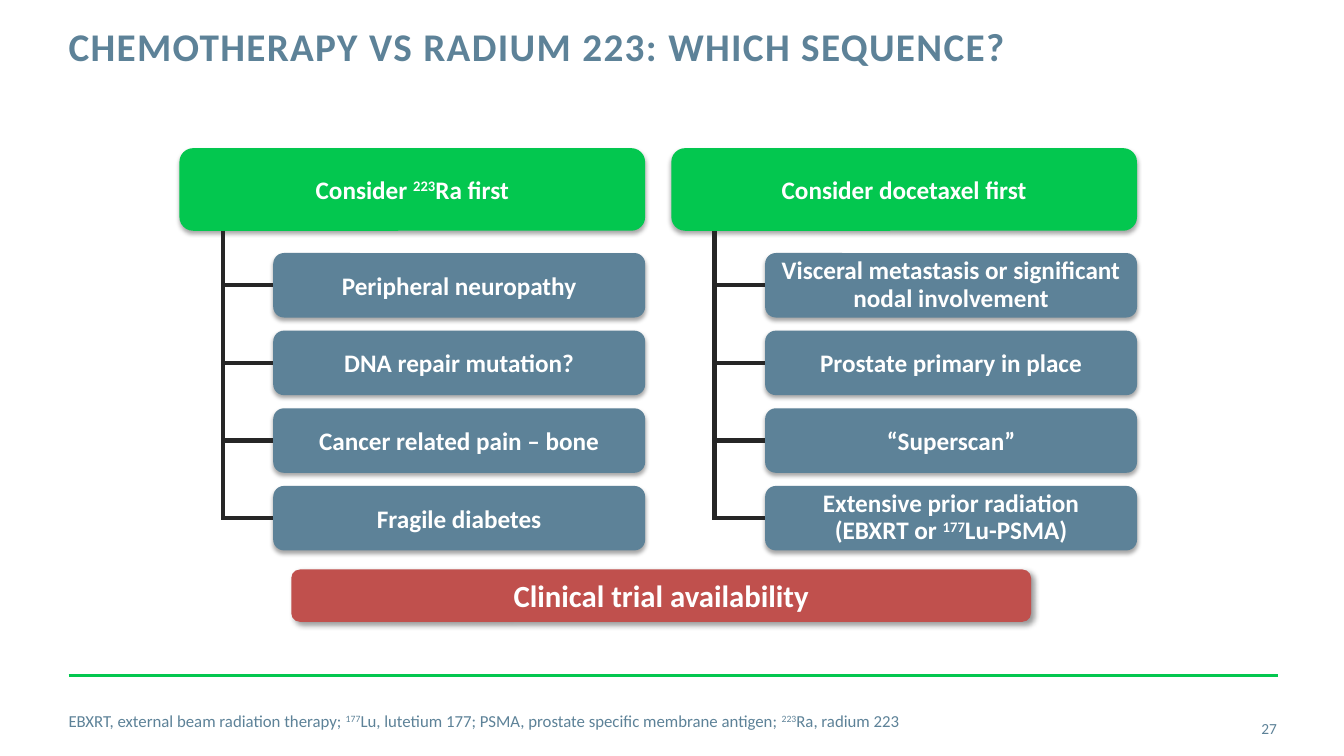
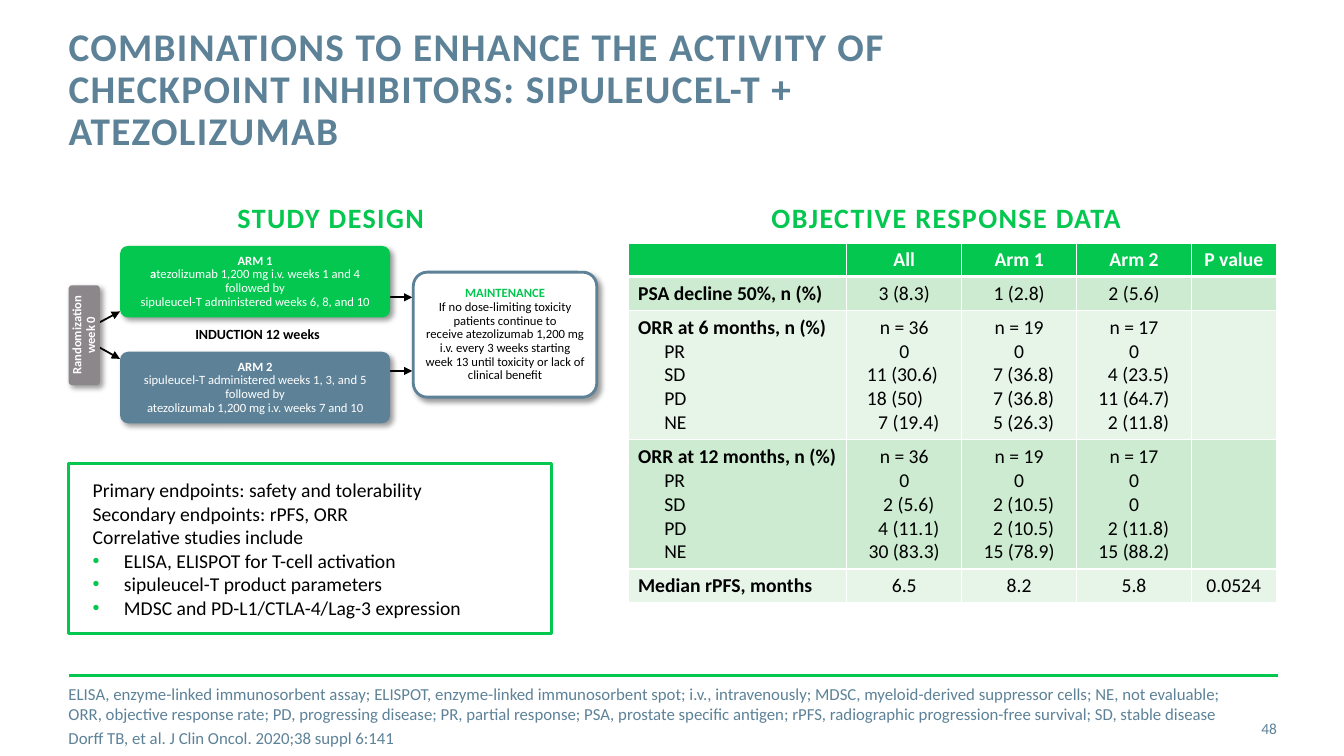
"""Builds two oncology slides: treatment sequence and a combination study."""
from lxml.etree import SubElement
from pptx import Presentation
from pptx.dml.color import RGBColor
from pptx.enum.shapes import MSO_CONNECTOR, MSO_SHAPE
from pptx.enum.text import MSO_ANCHOR, PP_ALIGN
from pptx.oxml.ns import qn
from pptx.util import Emu, Inches, Pt

RECT, ROUND = MSO_SHAPE.RECTANGLE, MSO_SHAPE.ROUNDED_RECTANGLE
STRAIGHT = MSO_CONNECTOR.STRAIGHT
TOP, MIDDLE = MSO_ANCHOR.TOP, MSO_ANCHOR.MIDDLE
LEFT, CENTER, RIGHT = PP_ALIGN.LEFT, PP_ALIGN.CENTER, PP_ALIGN.RIGHT
WIDTH, HEIGHT = Inches(13.333), Inches(7.5)
COLORS = {
    "green": "03C74F", "slate": "5D8298", "red": "C0504D", "grey": "8B878B",
    "ink": "262626", "black": "000000", "white": "FFFFFF",
    "band": "CCEBD0", "pale": "E7F5E9",
}
FONT = "Calibri"
MARGIN = 5.1
SOFT, DEEP = (35, 3.1, 1.8, 90), (40, 4, 3, 45)


def rgb(name):
    """Return a named colour."""
    return RGBColor.from_string(COLORS[name])


def across(share):
    """Turn a percentage of the slide's width into a length."""
    return Emu(round(WIDTH * share / 100))


def down(share):
    """Turn a percentage of the slide's height into a length."""
    return Emu(round(HEIGHT * share / 100))


def frame(at):
    """Turn left, top, width and height percentages into lengths."""
    x, y, w, h = at
    return across(x), down(y), across(w), down(h)


def add_runs(p, text, size, color, bold=False, accent=None, spc=0):
    """Write text in which *...* is bold and ^...^ is superscript."""
    for i, part in enumerate(text.split("*")):
        for j, piece in enumerate(part.split("^")):
            for k, line in enumerate(piece.split("\n")):
                if k:
                    p.add_line_break()
                if not line:
                    continue
                r = p.add_run()
                r.text = line
                r.font.name, r.font.size = FONT, Pt(size)
                r.font.bold = bold or i % 2 == 1
                r.font.color.rgb = rgb(accent if accent and i % 2 else color)
                r_pr = r._r.get_or_add_rPr()
                if j % 2:
                    r_pr.set("baseline", "30000")
                if spc:
                    r_pr.set("spc", str(spc * 100))
    for br in p._p.findall(qn("a:br")):
        SubElement(br, qn("a:rPr"), sz=str(size * 100))


def indent(p, left, first=0):
    """Indent a paragraph by lengths in inches."""
    p_pr = p._p.get_or_add_pPr()
    p_pr.set("marL", str(Inches(left)))
    p_pr.set("indent", str(Inches(first)))
    return p_pr


def bullet(p):
    """Give a paragraph a green bullet."""
    p_pr = indent(p, 0.31, -0.31)
    color = SubElement(p_pr, qn("a:buClr"))
    SubElement(color, qn("a:srgbClr"), val=COLORS["green"])
    SubElement(p_pr, qn("a:buFont"), typeface="Arial")
    SubElement(p_pr, qn("a:buChar"), char="•")


def write(tf, lines, size, color, align=LEFT, anchor=MIDDLE, insets=(0, 0, 0, 0),
          spacing=None, before=0, wrap=True, **style):
    """Fill a text frame; a line that starts with a bullet becomes a list item."""
    tf.word_wrap, tf.vertical_anchor = wrap, anchor
    tf.margin_left, tf.margin_top, tf.margin_right, tf.margin_bottom = map(Inches, insets)
    for i, line in enumerate(lines):
        p = tf.add_paragraph() if i else tf.paragraphs[0]
        if spacing:
            p.line_spacing = spacing
        if i and before:
            p.space_before = Pt(before)
        if line.startswith("•"):
            bullet(p)
        p.alignment = align
        add_runs(p, line.lstrip("•"), size, color, **style)


def label(s, at, lines, size, color, **style):
    """Add a text box."""
    write(s.shapes.add_textbox(*frame(at)).text_frame, lines, size, color, **style)


def box(s, at, fill, lines, size, color="white", kind=ROUND, line=None, shadow=None,
        adj=None, align=CENTER, insets=(0.08, 0.05, 0.08, 0.05), **style):
    """Add a filled shape with text and an optional outline and shadow."""
    sp = s.shapes.add_shape(kind, *frame(at))
    sp.fill.solid()
    sp.fill.fore_color.rgb = rgb(fill)
    if line:
        sp.line.color.rgb, sp.line.width = rgb(line[0]), Pt(line[1])
    else:
        sp.line.fill.background()
    sp.shadow.inherit = False
    if adj:
        sp.adjustments[0] = adj
    if shadow:
        alpha, blur, dist, angle = shadow
        effects = sp._element.spPr.find(qn("a:effectLst"))
        outer = SubElement(effects, qn("a:outerShdw"), blurRad=str(Pt(blur)),
                           dist=str(Pt(dist)), dir=str(angle * 60000), rotWithShape="0")
        tone = SubElement(outer, qn("a:srgbClr"), val=COLORS["black"])
        SubElement(tone, qn("a:alpha"), val=str(alpha * 1000))
    write(sp.text_frame, lines, size, color, align=align, insets=insets, **style)
    return sp


def connect(s, start, end, color, width, arrow=False):
    """Draw a straight line between two points."""
    c = s.shapes.add_connector(STRAIGHT, across(start[0]), down(start[1]),
                               across(end[0]), down(end[1]))
    c.line.color.rgb, c.line.width = rgb(color), Pt(width)
    sp_pr = c._element.spPr
    if arrow:
        SubElement(sp_pr.find(qn("a:ln")), qn("a:tailEnd"), type="triangle")
    SubElement(sp_pr, qn("a:effectLst"))
    return c


def base_slide(prs, title, number, notes, notes_top, notes_width, before=0):
    """Add a slide with its title, rule, footnotes and page number."""
    s = prs.slides.add_slide(prs.slide_layouts[6])
    connect(s, (MARGIN, 89.33), (100 - MARGIN + 0.2, 89.33), "green", 2)
    label(s, (MARGIN, 3.6, 72, 11.73), [title], 28, "slate", anchor=TOP,
          spacing=Pt(30), bold=True, spc=1)
    label(s, (MARGIN, notes_top, notes_width, 5.33), notes, 12, "slate", before=before)
    label(s, (88.57, 93.73, 6.45, 5.33), [str(number)], 11, "slate", align=RIGHT)
    return s


def hierarchy(s, left, heading, items):
    """Draw a heading with its items hanging from a trunk line."""
    top, head_h, first, step, item_h = 19.6, 10.93, 33.47, 10.27, 8.53
    style = {"size": 18, "bold": True, "shadow": SOFT, "insets": (0.05, 0.02, 0.05, 0.02)}
    box(s, (left, top, 34.65, head_h), "green", [heading], **style)
    trunk = left + 3.22
    middles = [first + i * step + item_h / 2 for i in range(len(items))]
    connect(s, (trunk, top + head_h), (trunk, middles[-1] + 0.25), "ink", 3)
    for item, middle in zip(items, middles):
        sp = box(s, (left + 6.98, middle - item_h / 2, 27.67, item_h), "slate", [item],
                 spacing=0.9 if "\n" in item else None, **style)
        c = connect(s, (left + 6.98, middle), (trunk, middle), "ink", 3)
        c.begin_connect(sp, 1)


def border(cell, header):
    """Give a cell white borders, thick below the header."""
    tc_pr = cell._tc.get_or_add_tcPr()
    for i, side in enumerate(("a:lnL", "a:lnR", "a:lnT", "a:lnB")):
        points = 3 if header and side == "a:lnB" else 1
        ln = tc_pr.makeelement(qn(side), {"w": str(Pt(points))})
        SubElement(SubElement(ln, qn("a:solidFill")), qn("a:srgbClr"), val=COLORS["white"])
        tc_pr.insert(i, ln)


def fill_cell(cell, text, row, col):
    """Write a table cell; < marks a left-aligned value."""
    cell.fill.solid()
    cell.fill.fore_color.rgb = rgb("green" if row == 0 else "band" if row % 2 else "pale")
    border(cell, row == 0)
    lines = text.split("\n")
    tf = cell.text_frame
    write(tf, [line.lstrip("<") for line in lines], 14, "black" if row else "white",
          align=CENTER if col else LEFT, anchor=TOP, insets=(0.1, 0.05, 0.1, 0.05),
          bold=row == 0)
    if not text:
        SubElement(tf.paragraphs[0]._p, qn("a:endParaRPr"), sz="1400")
    for i, (p, line) in enumerate(zip(tf.paragraphs, lines)):
        if line.startswith("<"):
            p.alignment = LEFT
            indent(p, 0.1)
        elif col == 0 and i:
            indent(p, 0.26)
        elif len(lines) > 1 and line[1:3] == " (":
            indent(p, 0.09)


def data_table(s, left, top, cols, heights, rows):
    """Add a table with columns and rows given as shares of the slide."""
    at = frame((left, top, sum(cols), sum(heights)))
    table = s.shapes.add_table(len(rows), len(cols), *at).table
    for col, share in zip(table.columns, cols):
        col.width = across(share)
    for i, (share, row) in enumerate(zip(heights, rows)):
        table.rows[i].height = down(share)
        for j, text in enumerate(row):
            fill_cell(table.cell(i, j), text, i, j)


def sequence_slide(prs):
    """Build the slide that compares the two sequences."""
    s = base_slide(prs, "CHEMOTHERAPY VS RADIUM 223: WHICH SEQUENCE?", 27,
                   ["EBXRT, external beam radiation therapy; ^177^Lu, lutetium 177; PSMA, "
                    "prostate specific membrane antigen; ^223^Ra, radium 223"], 92.67, 66.6)
    box(s, (21.67, 75.33, 55.05, 6.93), "red", ["Clinical trial availability"], 22,
        bold=True, shadow=DEEP)
    branches = [
        ("Consider ^223^Ra first",
         ["Peripheral neuropathy", "DNA repair mutation?",
          "Cancer related pain – bone", "Fragile diabetes"]),
        ("Consider docetaxel first",
         ["Visceral metastasis or significant\nnodal involvement", "Prostate primary in place",
          "“Superscan”", "Extensive prior radiation\n(EBXRT or ^177^Lu-PSMA)"]),
    ]
    for i, (heading, items) in enumerate(branches):
        hierarchy(s, 13.35 + i * 36.6, heading, items)


def study_design(s):
    """Draw the study arms, the arrows between them and the maintenance phase."""
    for y in (41.2, 47.47):
        connect(s, (5.7, 44.27), (8.93, y), "black", 1.25, arrow=True)
    for y in (39.33, 49.07):
        connect(s, (28.65, y), (30.68, y), "black", 1.25, arrow=True)
    style = {"size": 9, "shadow": DEEP, "adj": 0.112, "spacing": 0.9}
    sp = box(s, (2.55, 42.27, 7.43, 4.13), "grey", ["Randomization\nweek 0"],
             bold=True, **style)
    sp.rotation = 270
    arms = [
        ("green", ["*ARM 1\na*tezolizumab 1,200 mg i.v. weeks 1 and 4\nfollowed by\n"
                   "sipuleucel-T administered weeks 6, 8, and 10"]),
        ("slate", ["*ARM 2*\nsipuleucel-T administered weeks 1, 3, and 5", "followed by",
                   "atezolizumab 1,200 mg i.v. weeks 7 and 10"]),
    ]
    for i, (fill, lines) in enumerate(arms):
        box(s, (8.93, 32.53 + i * 14, 20.1, 9.47), fill, lines, **style)
    label(s, (14.4, 43.33, 9.38, 2), ["INDUCTION 12 weeks"], 10, "black", align=RIGHT,
          anchor=TOP, spacing=0.9, wrap=False, bold=True)
    box(s, (30.75, 36, 13.65, 16.53), "white",
        ["*MAINTENANCE*\nIf no dose-limiting toxicity\npatients continue to\n"
         "receive atezolizumab 1,200 mg\ni.v. every 3 weeks starting week 13 until "
         "toxicity or lack of clinical benefit"],
        color="black", accent="green", line=("slate", 2), **style)


def combination_slide(prs):
    """Build the slide with the study design and its response data."""
    s = base_slide(
        prs, "COMBINATIONS TO ENHANCE THE ACTIVITY OF CHECKPOINT INHIBITORS: "
        "SIPULEUCEL-T + ATEZOLIZUMAB", 48,
        ["ELISA, enzyme-linked immunosorbent assay; ELISPOT, enzyme-linked immunosorbent "
         "spot; i.v., intravenously; MDSC, myeloid-derived suppressor cells; NE, not "
         "evaluable; ORR, objective response rate; PD, progressing disease; PR, partial "
         "response; PSA, prostate specific antigen; rPFS, radiographic progression-free "
         "survival; SD, stable disease",
         "Dorff TB, et al. J Clin Oncol. 2020;38 suppl 6:141"], 92, 88.2, before=3)
    for x, w, text in ((17.55, 14.85, "STUDY DESIGN"),
                       (57.23, 27.08, "OBJECTIVE RESPONSE DATA")):
        label(s, (x, 26.53, w, 5.2), [text], 20, "green", align=CENTER, anchor=TOP,
              insets=(0, 0, 0.1, 0.05), wrap=False, bold=True, spc=1)
    study_design(s)
    box(s, (MARGIN, 61.33, 35.93, 22.53), "white",
        ["Primary endpoints: safety and tolerability", "Secondary endpoints: rPFS, ORR",
         "Correlative studies include", "•ELISA, ELISPOT for T-cell activation",
         "•sipuleucel-T product parameters", "•MDSC and PD-L1/CTLA-4/Lag-3 expression"],
        14, color="black", kind=RECT, line=("green", 2.25), align=LEFT,
        insets=(0.24, 0.05, 0.1, 0.05))
    data_table(s, 46.73, 32.13, [16.28, 8.55, 8.55, 8.55, 6.3],
               [4.4, 4.5, 17.1, 17.1, 4.5], [
        ["", "All", "Arm 1", "Arm 2", "P value"],
        ["*PSA decline 50%, n (%)*", "3 (8.3)", "1 (2.8)", "2 (5.6)", ""],
        ["*ORR at 6 months, n (%)*\nPR\nSD\nPD\nNE",
         "n = 36\n0\n<11 (30.6)\n<18 (50)\n7 (19.4)",
         "n = 19\n0\n7 (36.8)\n7 (36.8)\n5 (26.3)",
         "n = 17\n0\n4 (23.5)\n11 (64.7)\n2 (11.8)", ""],
        ["*ORR at 12 months, n (%)*\nPR\nSD\nPD\nNE",
         "n = 36\n0\n2 (5.6)\n4 (11.1)\n30 (83.3)",
         "n = 19\n0\n2 (10.5)\n2 (10.5)\n15 (78.9)",
         "n = 17\n0\n0\n2 (11.8)\n15 (88.2)", ""],
        ["*Median rPFS, months*", "6.5", "8.2", "5.8", "0.0524"],
    ])


def main():
    """Build and save the presentation."""
    prs = Presentation()
    prs.slide_width, prs.slide_height = WIDTH, HEIGHT
    sequence_slide(prs)
    combination_slide(prs)
    prs.save("out.pptx")


if __name__ == "__main__":
    main()
